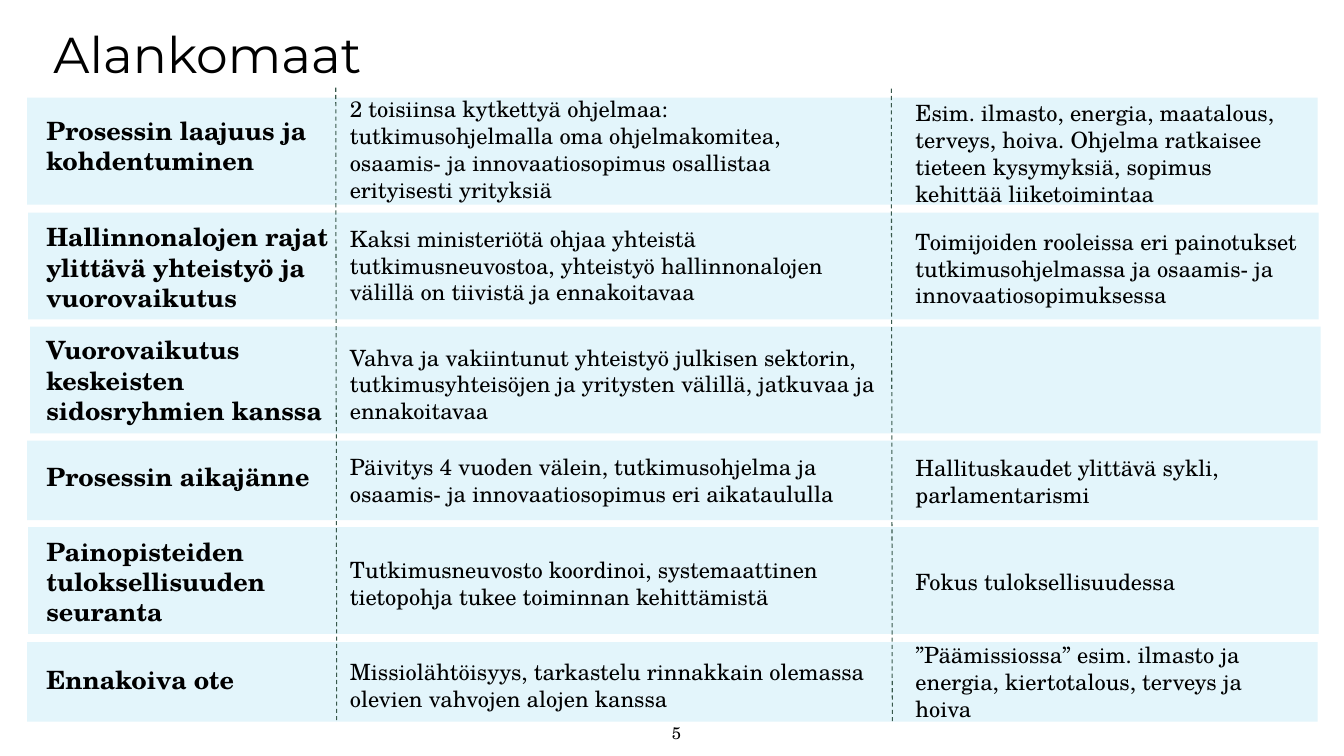
from dataclasses import dataclass

from lxml import etree
from pptx import Presentation
from pptx import util as u
from pptx.dml.color import RGBColor
from pptx.enum import dml, shapes, text
from pptx.oxml.ns import qn

PX = 9144  # EMU per px, 100 px to the inch
CELL_HEIGHT = 106


@dataclass(frozen=True)
class Theme:
    ink: str = "000000"
    band: str = "E3F5FB"
    divider: str = "38584B"
    title_font: str = "Montserrat"
    body_font: str = "TeX Gyre Schola"
    title_size: int = 36
    heading_size: int = 18
    body_size: int = 16
    number_size: int = 12
    divider_width: float = 0.75


@dataclass(frozen=True)
class Cell:
    words: str
    top: int
    width: int
    height: int = CELL_HEIGHT


@dataclass(frozen=True)
class Row:
    left: int
    top: int
    height: int
    cells: tuple


class SlideBuilder:
    def __init__(self, slide, theme):
        self.slide = slide
        self.theme = theme

    def color(self, value):
        return RGBColor.from_string(value)

    def fill_text(self, frame, words, size, font=None, bold=False,
                  align=text.PP_ALIGN.LEFT, anchor=text.MSO_ANCHOR.MIDDLE):
        frame.word_wrap = True
        frame.auto_size = text.MSO_AUTO_SIZE.NONE
        frame.vertical_anchor = anchor
        for index, line in enumerate(words.split("\n")):
            paragraph = frame.add_paragraph() if index else frame.paragraphs[0]
            paragraph.alignment = align
            run = paragraph.add_run()
            run.text = line
            run.font.name = font or self.theme.body_font
            run.font.size = u.Pt(size)
            run.font.bold = bold
            run.font.color.rgb = self.color(self.theme.ink)

    def title(self, words, left, top, width, height):
        shape = self.slide.shapes.title
        shape.left, shape.top = left * PX, top * PX
        shape.width, shape.height = width * PX, height * PX
        self.fill_text(shape.text_frame, words, self.theme.title_size,
                       self.theme.title_font, anchor=text.MSO_ANCHOR.TOP)

    def band(self, left, top, width, height):
        shape = self.slide.shapes.add_shape(
            shapes.MSO_SHAPE.RECTANGLE, left * PX, top * PX, width * PX, height * PX)
        shape.shadow.inherit = False
        shape.fill.solid()
        shape.fill.fore_color.rgb = self.color(self.theme.band)
        shape.line.fill.background()

    def label(self, words, left, top, width, height, size, inset=(8, 4), **style):
        shape = self.slide.shapes.add_textbox(
            left * PX, top * PX, width * PX, height * PX)
        frame = shape.text_frame
        frame.margin_left = frame.margin_right = inset[0] * PX
        frame.margin_top = frame.margin_bottom = inset[1] * PX
        self.fill_text(frame, words, size, **style)

    def divider(self, x1, y1, x2, y2):
        line = self.slide.shapes.add_connector(
            shapes.MSO_CONNECTOR.STRAIGHT, x1 * PX, y1 * PX, x2 * PX, y2 * PX)
        line.line.color.rgb = self.color(self.theme.divider)
        line.line.width = u.Pt(self.theme.divider_width)
        line.line.dash_style = dml.MSO_LINE.DASH
        etree.SubElement(line._element.spPr, qn("a:effectLst"))


COLUMN_LEFTS = (38, 339, 900)
BAND_WIDTH = 1280

ROWS = (
    Row(27, 97, 106, (
        Cell("Prosessin laajuus ja kohdentuminen", 91, 276),
        Cell("2 toisiinsa kytkettyä ohjelmaa: tutkimusohjelmalla oma ohjelmakomitea, "
             "osaamis- ja innovaatiosopimus osallistaa erityisesti yrityksiä", 95, 527),
        Cell("Esim. ilmasto, energia, maatalous, terveys, hoiva. Ohjelma ratkaisee "
             "tieteen kysymyksiä, sopimus kehittää liiketoimintaa", 119, 397, 66))),
    Row(28, 211, 106, (
        Cell("Hallinnonalojen rajat ylittävä yhteistyö ja vuorovaikutus", 212, 320),
        Cell("Kaksi ministeriötä ohjaa yhteistä tutkimusneuvostoa, yhteistyö "
             "hallinnonalojen välillä on tiivistä ja ennakoitavaa", 210, 540),
        Cell("Toimijoiden rooleissa eri painotukset tutkimusohjelmassa ja osaamis- ja "
             "innovaatiosopimuksessa", 213, 416))),
    Row(30, 324, 106, (
        Cell("Vuorovaikutus keskeisten sidosryhmien kanssa", 324, 294),
        Cell("Vahva ja vakiintunut yhteistyö julkisen sektorin, tutkimusyhteisöjen ja "
             "yritysten välillä, jatkuvaa ja ennakoitavaa", 328, 562))),
    Row(27, 437, 79, (
        Cell("Prosessin aikajänne", 420, 296),
        Cell("Päivitys 4 vuoden välein, tutkimusohjelma ja osaamis- ja "
             "innovaatiosopimus eri aikataululla", 423, 542),
        Cell("Hallituskaudet ylittävä sykli, parlamentarismi", 424, 367))),
    Row(28, 523, 106, (
        Cell("Painopisteiden tuloksellisuuden seuranta", 524, 236),
        Cell("Tutkimusneuvosto koordinoi, systemaattinen tietopohja tukee toiminnan "
             "kehittämistä", 524, 539, 108),
        Cell("Fokus tuloksellisuudessa", 524, 302))),
    Row(27, 637, 79, (
        Cell("Ennakoiva ote", 621, 236),
        Cell("Missiolähtöisyys, tarkastelu rinnakkain olemassa\n"
             "olevien vahvojen alojen kanssa", 627, 535),
        Cell("”Päämissiossa” esim. ilmasto ja energia, kiertotalous, terveys ja hoiva",
             623, 399))),
)


def main():
    presentation = Presentation()
    presentation.slide_width, presentation.slide_height = 1333 * PX, 750 * PX
    theme = Theme()
    slide = presentation.slides.add_slide(presentation.slide_layouts.get_by_name("Title Only"))
    builder = SlideBuilder(slide, theme)

    builder.title("Alankomaat", 43, 18, 1102, 124)

    # Row bands, all behind the text
    for row in ROWS:
        builder.band(row.left, row.top, BAND_WIDTH, row.height)

    # Bold headings in the first column, findings in the others
    for row in ROWS:
        for column, (left, cell) in enumerate(zip(COLUMN_LEFTS, row.cells)):
            size = theme.body_size if column else theme.heading_size
            builder.label(cell.words, left, cell.top, cell.width, cell.height,
                          size, bold=column == 0)

    # Column dividers
    builder.divider(884, 88, 885, 718)
    builder.divider(333, 87, 334, 717)

    # Slide number
    builder.label("5", 521, 674, 300, CELL_HEIGHT, theme.number_size,
                  inset=(10, 5), align=text.PP_ALIGN.CENTER)

    presentation.save("out.pptx")


if __name__ == "__main__":
    main()
